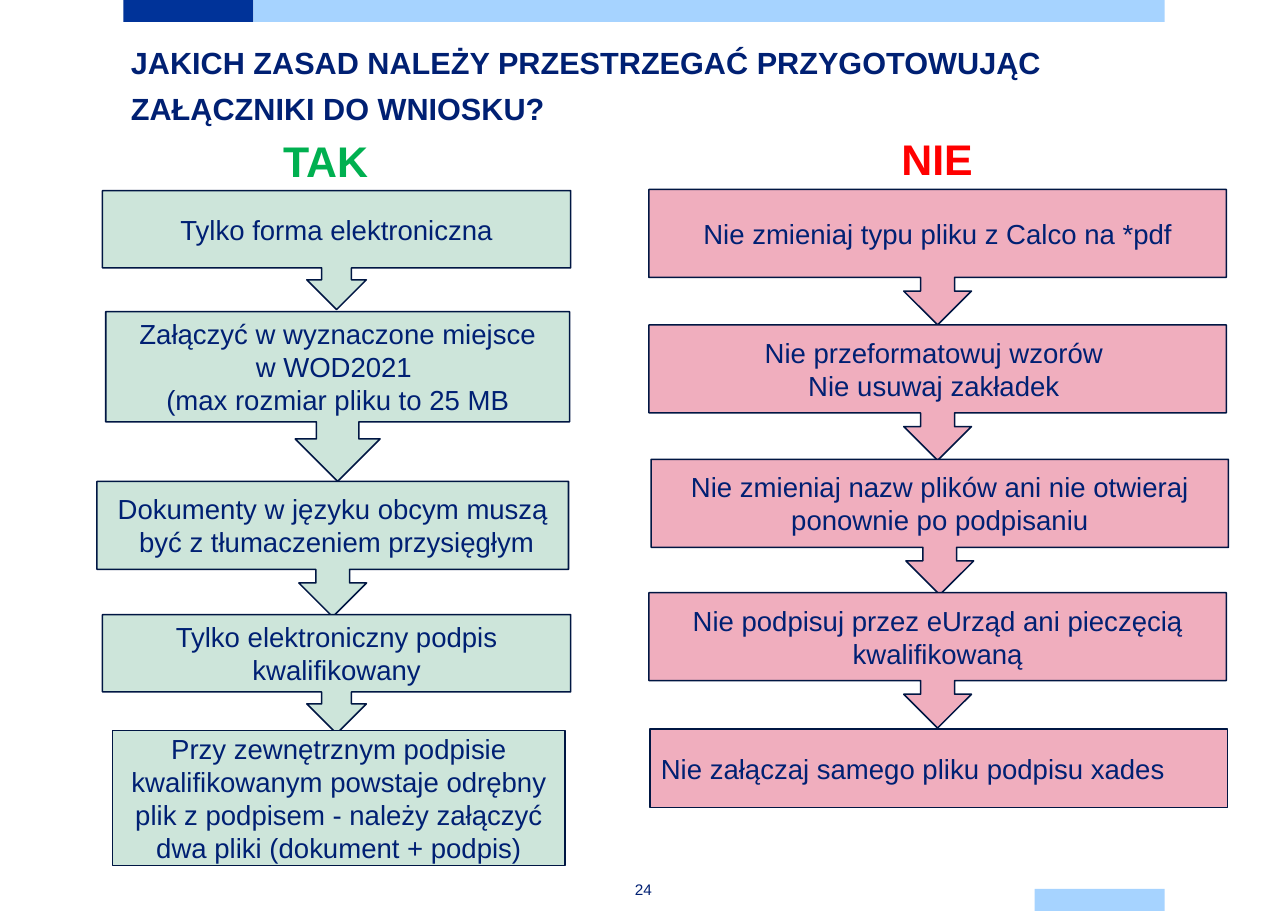
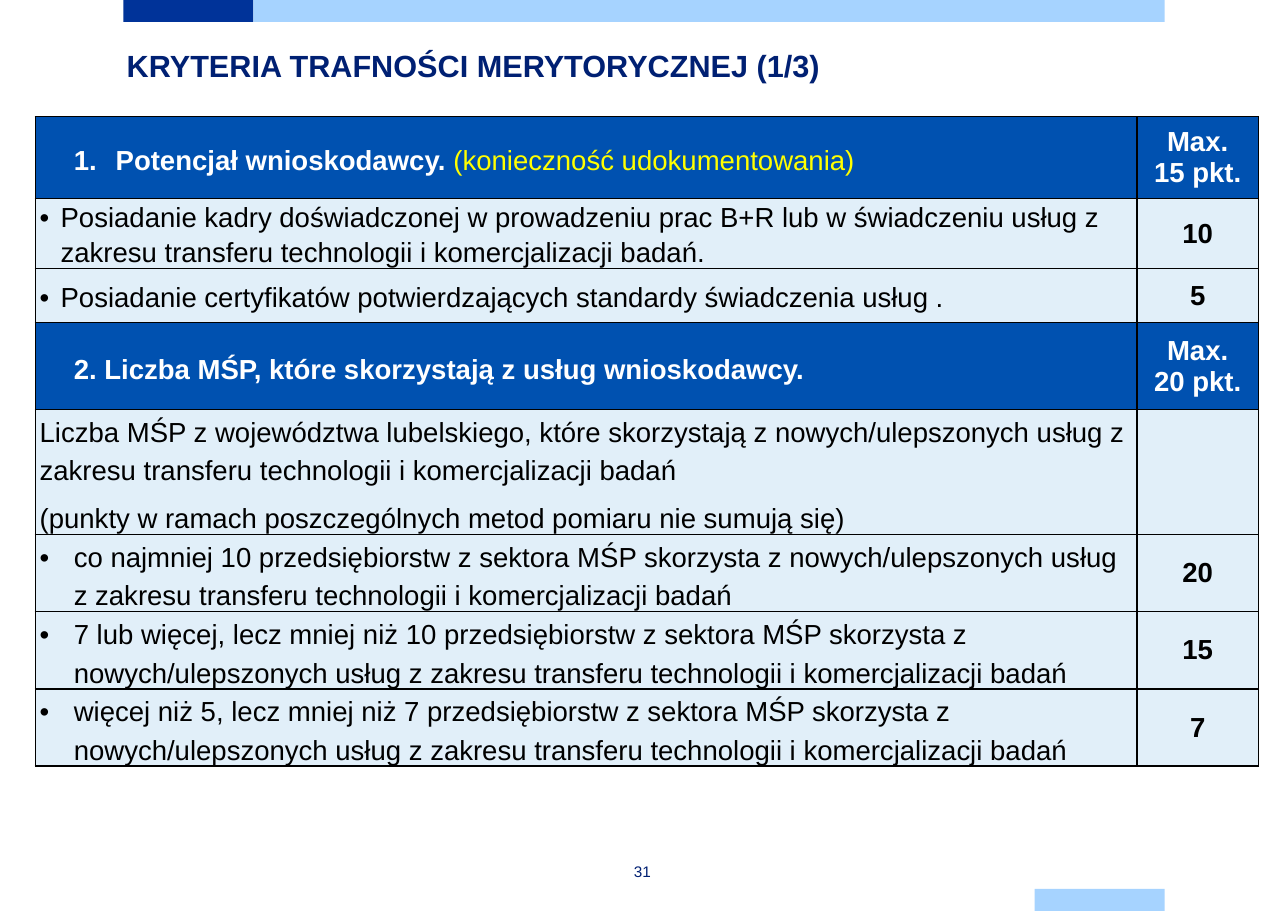
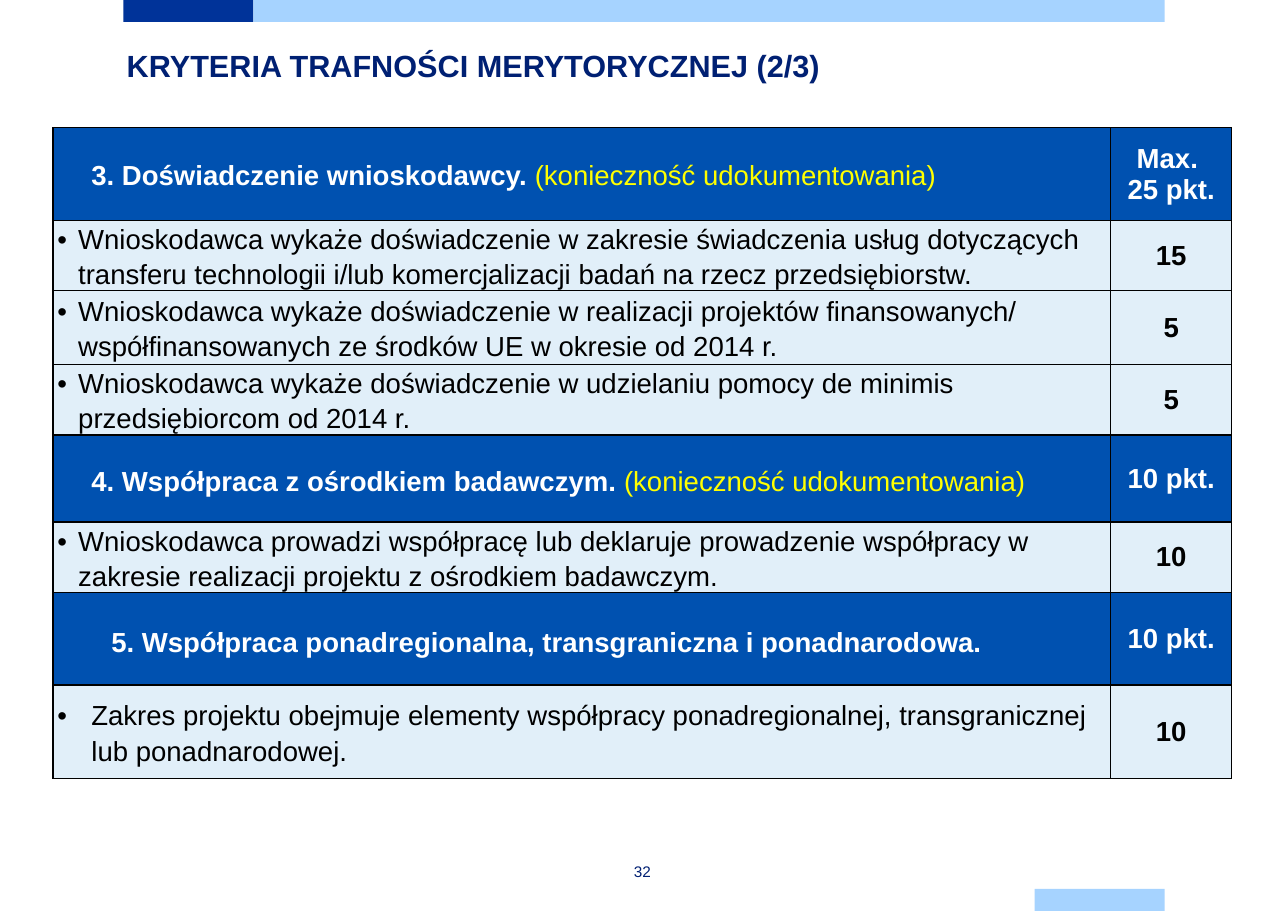
from lxml.etree import SubElement
from pptx import Presentation
from pptx.dml.color import RGBColor
from pptx.enum.shapes import MSO_SHAPE
from pptx.enum.text import MSO_ANCHOR, PP_ALIGN
from pptx.oxml.ns import qn
from pptx.util import Emu, Pt

# Shared look: 100 px to the inch
PX = 9144
FONT = "Arial"
NAVY, WHITE, BLACK, YELLOW = "002073", "FFFFFF", "000000", "FFFF00"
OUTLINE, HEADER_FILL, ROW_FILL = "001643", "0051B0", "E1EFF9"
BANDS = [
    (112, 0, 118, 20, "003399"),
    (230, 0, 827, 20, "A6D3FF"),
    (939, 807, 118, 20, "A6D3FF"),
]
TABLE_TITLE = dict(box=(115, 36, 945, 47), insets=(0, 0, 0, 0), spacing=Pt(28.6))

# Slide with rules: heading and chain of boxes for each column
RULES_TITLE = "JAKICH ZASAD NALEŻY PRZESTRZEGAĆ PRZYGOTOWUJĄC ZAŁĄCZNIKI DO WNIOSKU?"
RULE_COLUMNS = [
    dict(
        heading="TAK", heading_box=(237, 117, 117, 57), colour="00B050",
        fill="CDE5DA", last_align=PP_ALIGN.CENTER,
        steps=[
            ((93, 173, 425, 108), ["Tylko forma elektroniczna"]),
            ((96, 283, 421, 154), ["Załączyć w wyznaczone miejsce", "w WOD2021 ",
                                   "(max rozmiar pliku to 25 MB"]),
            ((88, 437, 428, 123), ["Dokumenty w języku obcym muszą",
                                   " być z tłumaczeniem przysięgłym"]),
            ((93, 558, 425, 108), ["Tylko elektroniczny podpis kwalifikowany"]),
            ((102, 663, 411, 123), ["Przy zewnętrznym podpisie kwalifikowanym powstaje odrębny "
                                    "plik z podpisem - należy załączyć dwa pliki "
                                    "(dokument + podpis)"]),
        ],
    ),
    dict(
        heading="NIE", heading_box=(800, 116, 101, 57), colour="FF0000",
        fill="F0AEBE", last_align=PP_ALIGN.LEFT,
        steps=[
            ((589, 172, 524, 123), ["Nie zmieniaj typu pliku z Calco na *pdf"]),
            ((589, 295, 524, 123), ["Nie przeformatowuj wzorów ", "Nie usuwaj zakładek "]),
            ((591, 417, 524, 123), ["Nie zmieniaj nazw plików ani nie otwieraj ponownie "
                                    "po podpisaniu"]),
            ((589, 538, 524, 123), ["Nie podpisuj przez eUrząd ani pieczęcią kwalifikowaną"]),
            ((590, 662, 524, 71), ["Nie załączaj samego pliku podpisu xades"]),
        ],
    ),
]

# Criteria row styles: left margin, first-line indent, line spacing, bullet
SNUG_LINE, OPEN_LINE = Pt(22.9), Pt(25.2)
ROW_STYLES = {
    "numbered heading": (69, -38, 1.25, "1."),
    "heading": (31, 0, 1.25, None),
    "snug heading": (31, 0, 1.14, None),
    "deep heading": (49, 0, 1.25, None),
    "plain": (0, 0, OPEN_LINE, None),
    "criterion": (19, -19, SNUG_LINE, "•"),
    "threshold": (31, -31, OPEN_LINE, "•"),
    "scope": (31, -31, 1.14, "•"),
}
NOTE = "(konieczność udokumentowania)"

# Criteria rows: height, style, paragraphs as lists of runs, points
CRITERIA = [
    dict(
        title="KRYTERIA TRAFNOŚCI MERYTORYCZNEJ (1/3)", page="31",
        corner=(32, 106), columns=(1000, 110),
        rows=[
            (74, "numbered heading", [["Potencjał wnioskodawcy. ", NOTE]], ["Max. 15 pkt."]),
            (64, "criterion", [["Posiadanie kadry doświadczonej w prowadzeniu prac B+R lub w "
                                "świadczeniu usług z zakresu transferu technologii i "
                                "komercjalizacji badań."]], ["10"]),
            (49, "criterion", [["Posiadanie certyfikatów potwierdzających standardy "
                                "świadczenia usług ."]], ["5"]),
            (79, "heading", [["2. Liczba MŚP, które skorzystają z usług wnioskodawcy."]],
             ["Max. 20 pkt."]),
            (113, "plain", [["Liczba MŚP z województwa lubelskiego, które skorzystają z "
                             "nowych/ulepszonych usług z zakresu transferu technologii i "
                             "komercjalizacji badań"],
                            ["(punkty w ramach poszczególnych metod pomiaru nie sumują się)"]],
             []),
            (70, "threshold", [["co najmniej 10 przedsiębiorstw z sektora MŚP skorzysta z "
                                "nowych/ulepszonych usług z zakresu transferu technologii i "
                                "komercjalizacji badań"]], ["20"]),
            (70, "threshold", [["7 lub więcej, lecz mniej niż 10 przedsiębiorstw z sektora MŚP "
                                "skorzysta z nowych/ulepszonych usług z zakresu transferu "
                                "technologii i komercjalizacji badań"]], ["15"]),
            (70, "threshold", [["więcej niż 5, lecz mniej niż 7 przedsiębiorstw z sektora MŚP "
                                "skorzysta z nowych/ulepszonych usług z zakresu transferu "
                                "technologii i komercjalizacji badań"]], ["7"]),
        ],
    ),
    dict(
        title="KRYTERIA TRAFNOŚCI MERYTORYCZNEJ (2/3)", page="32",
        corner=(48, 116), columns=(960, 110),
        rows=[
            (84, "snug heading", [["3. Doświadczenie wnioskodawcy. ", NOTE]],
             ["Max. ", "25 pkt."]),
            (64, "criterion", [["Wnioskodawca wykaże doświadczenie w zakresie świadczenia usług "
                                "dotyczących transferu technologii i/lub komercjalizacji badań "
                                "na rzecz przedsiębiorstw."]], ["15"]),
            (67, "criterion", [["Wnioskodawca wykaże doświadczenie w realizacji projektów "
                                "finansowanych/ współfinansowanych ze środków UE w okresie "
                                "od 2014 r."]], ["5"]),
            (64, "criterion", [["Wnioskodawca wykaże doświadczenie w udzielaniu pomocy de "
                                "minimis przedsiębiorcom od 2014 r."]], ["5"]),
            (79, "heading", [["4. Współpraca z ośrodkiem badawczym. ", NOTE]], ["10 pkt."]),
            (64, "criterion", [["Wnioskodawca prowadzi współpracę lub deklaruje prowadzenie "
                                "współpracy w zakresie realizacji projektu z ośrodkiem "
                                "badawczym."]], ["10"]),
            (84, "deep heading", [["5. Współpraca ponadregionalna, transgraniczna i "
                                   "ponadnarodowa."]], ["10 pkt."]),
            (85, "scope", [["Zakres projektu obejmuje elementy współpracy ponadregionalnej, "
                            "transgranicznej lub ponadnarodowej."]], ["10"]),
        ],
    ),
]


def px(*lengths):
    return [Emu(length * PX) for length in lengths]


def paint(colour_format, colour):
    colour_format.rgb = RGBColor.from_string(colour)


def set_bullet(paragraph, left, indent, bullet):
    props = paragraph._p.get_or_add_pPr()
    props.set("marL", str(left * PX))
    props.set("indent", str(indent * PX))
    if bullet == "1.":
        SubElement(props, qn("a:buAutoNum"), type="arabicPeriod")
    elif bullet:
        SubElement(props, qn("a:buFont"), typeface=FONT)
        SubElement(props, qn("a:buChar"), char=bullet)


def write(frame, paragraphs, size=18, align=PP_ALIGN.LEFT, spacing=None, layout=None):
    """Each paragraph is a list of (text, colour, bold) runs."""
    for number, runs in enumerate(paragraphs):
        paragraph = frame.add_paragraph() if number else frame.paragraphs[0]
        if layout:
            set_bullet(paragraph, *layout)
        paragraph.alignment = align
        if spacing:
            paragraph.line_spacing = spacing
        if number and layout:
            paragraph.space_before = Pt(6)
        for text, colour, bold in runs:
            run = paragraph.add_run()
            run.text = text
            run.font.name, run.font.size, run.font.bold = FONT, Pt(size), bold
            paint(run.font.color, colour)


def add_label(slide, box, text, size, colour, bold=True, align=PP_ALIGN.LEFT,
              spacing=None, insets=(10, 5, 10, 5), anchor=MSO_ANCHOR.TOP):
    frame = slide.shapes.add_textbox(*px(*box)).text_frame
    frame.word_wrap = True
    frame.vertical_anchor = anchor
    (frame.margin_left, frame.margin_top,
     frame.margin_right, frame.margin_bottom) = px(*insets)
    write(frame, [[(text, colour, bold)]], size, align, spacing)


def add_block(slide, kind, box, fill, line=None):
    block = slide.shapes.add_shape(kind, *px(*box))
    block.shadow.inherit = False
    block.fill.solid()
    paint(block.fill.fore_color, fill)
    if line:
        paint(block.line.color, line)
        block.line.width = Pt(1)
    else:
        block.line.fill.background()
    return block


def start_slide(deck, title, page, page_box, **title_style):
    slide = deck.slides.add_slide(deck.slide_layouts[6])
    for *box, fill in BANDS:
        add_block(slide, MSO_SHAPE.RECTANGLE, box, fill)
    add_label(slide, text=title, size=20, colour=NAVY, **title_style)
    add_label(slide, page_box, page, 10, NAVY, bold=False, align=PP_ALIGN.CENTER,
              insets=(0, 8, 0, 8), anchor=MSO_ANCHOR.MIDDLE)
    return slide


def add_rule_column(slide, column):
    add_label(slide, column["heading_box"], column["heading"], 28, column["colour"],
              align=PP_ALIGN.CENTER)
    last = len(column["steps"]) - 1
    for number, (box, lines) in enumerate(column["steps"]):
        kind, align = MSO_SHAPE.DOWN_ARROW_CALLOUT, PP_ALIGN.CENTER
        if number == last:
            kind, align = MSO_SHAPE.RECTANGLE, column["last_align"]
        frame = add_block(slide, kind, box, column["fill"], OUTLINE).text_frame
        frame.word_wrap = True
        frame.vertical_anchor = MSO_ANCHOR.MIDDLE
        write(frame, [[(line, NAVY, False)] for line in lines], align=align)


def style_cell(cell, fill):
    props = cell._tc.get_or_add_tcPr()
    for side in ("a:lnL", "a:lnR", "a:lnT", "a:lnB"):
        border = SubElement(props, qn(side), w=str(Pt(1)))
        SubElement(SubElement(border, qn("a:solidFill")), qn("a:srgbClr"), val=BLACK)
    cell.fill.solid()
    paint(cell.fill.fore_color, fill)
    cell.vertical_anchor = MSO_ANCHOR.MIDDLE


def add_criteria(slide, corner, columns, rows):
    size = (sum(columns), sum(row[0] for row in rows))
    table = slide.shapes.add_table(len(rows), len(columns), *px(*corner, *size)).table
    table.first_row = table.horz_banding = False
    for column, width in zip(table.columns, px(*columns)):
        column.width = width
    for number, (height, style, paragraphs, points) in enumerate(rows):
        table.rows[number].height = Emu(height * PX)
        is_heading = style.endswith("heading")
        colour = WHITE if is_heading else BLACK
        left, indent, spacing, bullet = ROW_STYLES[style]
        criterion, score = table.cell(number, 0), table.cell(number, 1)
        for cell in (criterion, score):
            style_cell(cell, HEADER_FILL if is_heading else ROW_FILL)
        criterion.margin_left = criterion.margin_right = Emu(4 * PX)
        criterion.margin_top = criterion.margin_bottom = 0
        runs = [[(text, YELLOW, False) if text == NOTE else (text, colour, is_heading)
                 for text in paragraph] for paragraph in paragraphs]
        write(criterion.text_frame, runs, spacing=spacing, layout=(left, indent, bullet))
        write(score.text_frame, [[(line, colour, True)] for line in points],
              align=PP_ALIGN.CENTER)


def main():
    deck = Presentation()
    deck.slide_width, deck.slide_height = px(1169, 827)

    # Rules for attachments
    slide = start_slide(deck, RULES_TITLE, "24", (525, 797, 118, 20),
                        box=(109, 27, 1004, 89), spacing=1.25)
    for column in RULE_COLUMNS:
        add_rule_column(slide, column)

    # Criteria tables
    for part in CRITERIA:
        slide = start_slide(deck, part["title"], part["page"], (524, 781, 118, 20),
                            **TABLE_TITLE)
        add_criteria(slide, part["corner"], part["columns"], part["rows"])

    deck.save("out.pptx")


if __name__ == "__main__":
    main()
